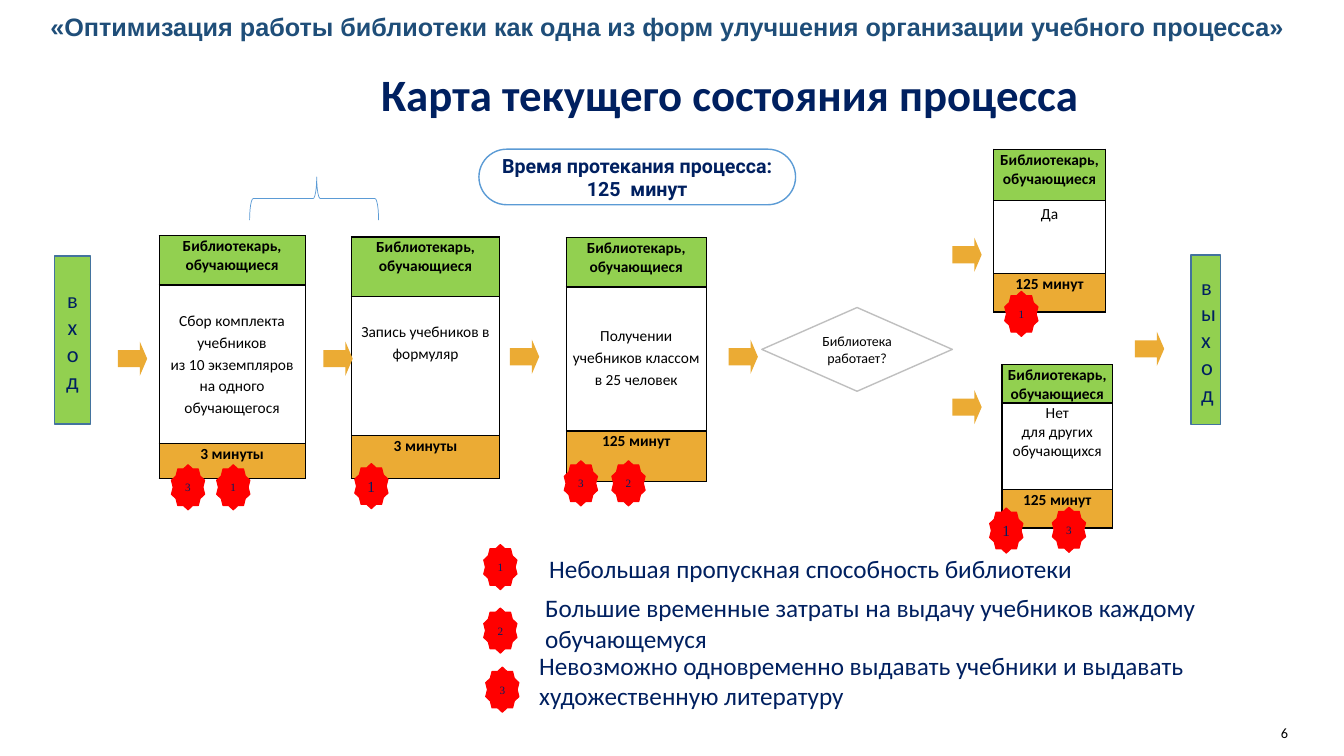
from lxml import etree
from pptx import Presentation
from pptx.dml.color import RGBColor
from pptx.enum.shapes import MSO_SHAPE
from pptx.enum.text import MSO_ANCHOR, PP_ALIGN
from pptx.oxml.ns import qn
from pptx.util import Cm, Pt

LEFT, CENTER = PP_ALIGN.LEFT, PP_ALIGN.CENTER
TOP, MIDDLE = MSO_ANCHOR.TOP, MSO_ANCHOR.MIDDLE

COLORS = {
    "black": "000000", "white": "FFFFFF", "navy": "002060", "header": "1F4E79",
    "green": "92D050", "orange": "EBAB34", "red": "FF0000",
    "blue": "5B9BD5", "edge": "43739E", "gray": "BFBFBF",
}

HEADER = "«Оптимизация работы библиотеки как одна из форм улучшения организации учебного процесса»"
TITLE = "Карта текущего состояния процесса"
DURATION = "Время протекания процесса: 125  минут"
QUESTION = "Библиотека работает?"
PAGE = "6"
ACTORS = "Библиотекарь, обучающиеся"

STEPS = [
    {"at": (4.01, 5.94), "width": 3.68, "rows": (1.24, 3.99, 0.89), "time": "3 минуты",
     "work": ["Сбор комплекта учебников", "из 10 экземпляров на одного обучающегося"],
     "gap": 0.6, "spacing": 1.15},
    {"at": (8.86, 5.97), "width": 3.73, "rows": (1.5, 3.51, 1.07), "time": "3 минуты",
     "work": ["Запись учебников в формуляр"], "gap": 0.6, "spacing": 1.15},
    {"at": (14.27, 5.99), "width": 3.53, "rows": (1.24, 3.63, 1.27), "time": "125 минут",
     "work": ["Получении учебников классом в 25 человек"], "gap": 0.94, "spacing": 1.15},
    {"at": (25.25, 9.19), "width": 2.79, "rows": (0.96, 2.18, 0.97), "time": "125 минут",
     "work": ["Нет", "для других обучающихся"], "gap": 0.03, "spacing": 1},
    {"at": (25.04, 3.76), "width": 2.82, "rows": (1.3, 1.83, 0.97), "time": "125 минут",
     "work": ["Да"], "gap": 0.03, "spacing": 1.15},
]

GATES = [("вход", (1.37, 6.45, 0.91, 4.24)), ("выход", (30.02, 6.43, 0.74, 4.27))]

ARROW_SIZE = (0.74, 0.86)
ARROWS = [(2.97, 8.61), (8.15, 8.61), (12.85, 8.56), (18.36, 8.56),
          (24, 5.99), (24, 9.83), (28.6, 8.36)]

BADGE_SIZE = (0.84, 1.14)
BADGES = [
    ("3", (4.32, 11.71), 8), ("1", (5.46, 11.71), 8),
    ("1", (8.94, 11.68), 11),
    ("3", (14.22, 11.61), 8), ("2", (15.42, 11.61), 8),
    ("1", (24.94, 12.8), 11), ("3", (26.52, 12.78), 8),
    ("1", (25.32, 7.34), 8),
]

PROBLEMS = [
    ("1", (12.19, 13.72), (13.59, 13.82, 17.2, 1.02),
     "Небольшая пропускная способность библиотеки"),
    ("2", (12.19, 15.32), (13.49, 14.81, 16.94, 1.8),
     "Большие временные затраты на выдачу учебников каждому обучающемуся"),
    ("3", (12.24, 16.81), (13.34, 16.26, 18.21, 1.8),
     "Невозможно одновременно выдавать учебники и выдавать художественную литературу"),
]


def rgb(name):
    return RGBColor.from_string(COLORS[name])


def cm(values):
    return [Cm(value) for value in values]


def write(frame, text, size=11, font="Calibri", color="black", bold=False,
          align=LEFT, anchor=TOP, wrap=True, spacing=None, margins=None):
    frame.word_wrap = wrap
    frame.vertical_anchor = anchor
    if margins is not None:
        (frame.margin_left, frame.margin_top,
         frame.margin_right, frame.margin_bottom) = cm(margins)
    lines = [text] if isinstance(text, str) else text
    for index, line in enumerate(lines):
        paragraph = frame.paragraphs[0] if index == 0 else frame.add_paragraph()
        paragraph.alignment = align
        if spacing:
            paragraph.line_spacing = spacing
        run = paragraph.add_run()
        run.text = line
        run.font.size = Pt(size)
        run.font.name = font
        run.font.bold = bold
        run.font.color.rgb = rgb(color)


def add_text(slide, box, text, **style):
    write(slide.shapes.add_textbox(*cm(box)).text_frame, text, **style)


def add_figure(slide, kind, box, fill=None, line=None, weight=1):
    figure = slide.shapes.add_shape(kind, *cm(box))
    figure.shadow.inherit = False
    if fill:
        figure.fill.solid()
        figure.fill.fore_color.rgb = rgb(fill)
    else:
        figure.fill.background()
    if line:
        figure.line.color.rgb = rgb(line)
        figure.line.width = Pt(weight)
    else:
        figure.line.fill.background()
    return figure


def add_badge(slide, digit, place, size=8):
    badge = add_figure(slide, MSO_SHAPE.STAR_10_POINT, place + BADGE_SIZE, "red", "red", 0.75)
    write(badge.text_frame, digit, size=size, font="Times New Roman", color="navy",
          align=CENTER, anchor=MIDDLE, wrap=False, margins=(0, 0, 0, 0))


def paint_cell(cell, fill):
    properties = cell._tc.get_or_add_tcPr()
    for side in ("lnL", "lnR", "lnT", "lnB"):
        border = etree.SubElement(properties, qn("a:" + side), w=str(Pt(1)))
        solid = etree.SubElement(border, qn("a:solidFill"))
        etree.SubElement(solid, qn("a:srgbClr"), val=COLORS["black"])
    cell.fill.solid()
    cell.fill.fore_color.rgb = rgb(fill)


def add_step(slide, step):
    box = step["at"] + (step["width"], sum(step["rows"]))
    card = slide.shapes.add_table(3, 1, *cm(box)).table
    card.first_row = card.horz_banding = False
    parts = [
        (ACTORS, "green", {"bold": True}, 0.03),
        (step["work"], "white", {"spacing": step["spacing"]}, step["gap"]),
        (step["time"], "orange", {"bold": True}, 0.03),
    ]
    for index, (text, fill, style, top) in enumerate(parts):
        card.rows[index].height = Cm(step["rows"][index])
        cell = card.cell(index, 0)
        (cell.margin_left, cell.margin_top,
         cell.margin_right, cell.margin_bottom) = cm((0.1, top, 0.1, 0))
        write(cell.text_frame, text, align=CENTER, anchor=None, wrap=None, **style)
        paint_cell(cell, fill)


def main():
    deck = Presentation()
    deck.slide_width, deck.slide_height = cm((33.87, 19.05))
    slide = deck.slides.add_slide(deck.slide_layouts[5])

    title = slide.shapes.title
    title.left, title.top, title.width, title.height = cm((9.35, 1.55, 18.26, 1.63))
    write(title.text_frame, TITLE, size=32, color="navy", bold=True, wrap=False)
    add_text(slide, (1.02, 0.15, 31.75, 1.02), HEADER, size=18, font="Arial",
             color="header", bold=True)
    add_text(slide, (32.28, 18.24, 0.79, 0.43), PAGE, size=10.2, anchor=MIDDLE,
             wrap=False, margins=(0, 0, 0, 0))

    duration = add_figure(slide, MSO_SHAPE.ROUNDED_RECTANGLE, (12.07, 3.76, 7.98, 1.4),
                          "white", "blue")
    duration.adjustments[0] = 0.5
    write(duration.text_frame, DURATION, size=14, font="Roboto", color="navy",
          bold=True, align=CENTER, anchor=MIDDLE)

    brace = add_figure(slide, MSO_SHAPE.LEFT_BRACE, (7.37, 3.38, 1.09, 3.25),
                       line="blue", weight=0.5)
    brace.rotation = 90
    brace.adjustments[1] = 0.48

    for step in STEPS:
        add_step(slide, step)

    question = add_figure(slide, MSO_SHAPE.FLOWCHART_DECISION, (19.2, 7.75, 4.8, 2.11),
                          "white", "gray")
    write(question.text_frame, QUESTION, size=10, align=CENTER, anchor=MIDDLE)

    for label, box in GATES:
        gate = add_figure(slide, MSO_SHAPE.RECTANGLE, box, "green", "edge")
        write(gate.text_frame, label, size=16, color="navy", align=CENTER, anchor=MIDDLE)

    for place in ARROWS:
        arrow = add_figure(slide, MSO_SHAPE.RIGHT_ARROW, place + ARROW_SIZE, "orange")
        arrow.adjustments[1] = 0.25

    for digit, place, size in BADGES:
        add_badge(slide, digit, place, size)

    for digit, place, box, problem in PROBLEMS:
        add_badge(slide, digit, place)
        add_text(slide, box, problem, size=18, color="navy")

    deck.save("out.pptx")


if __name__ == "__main__":
    main()
